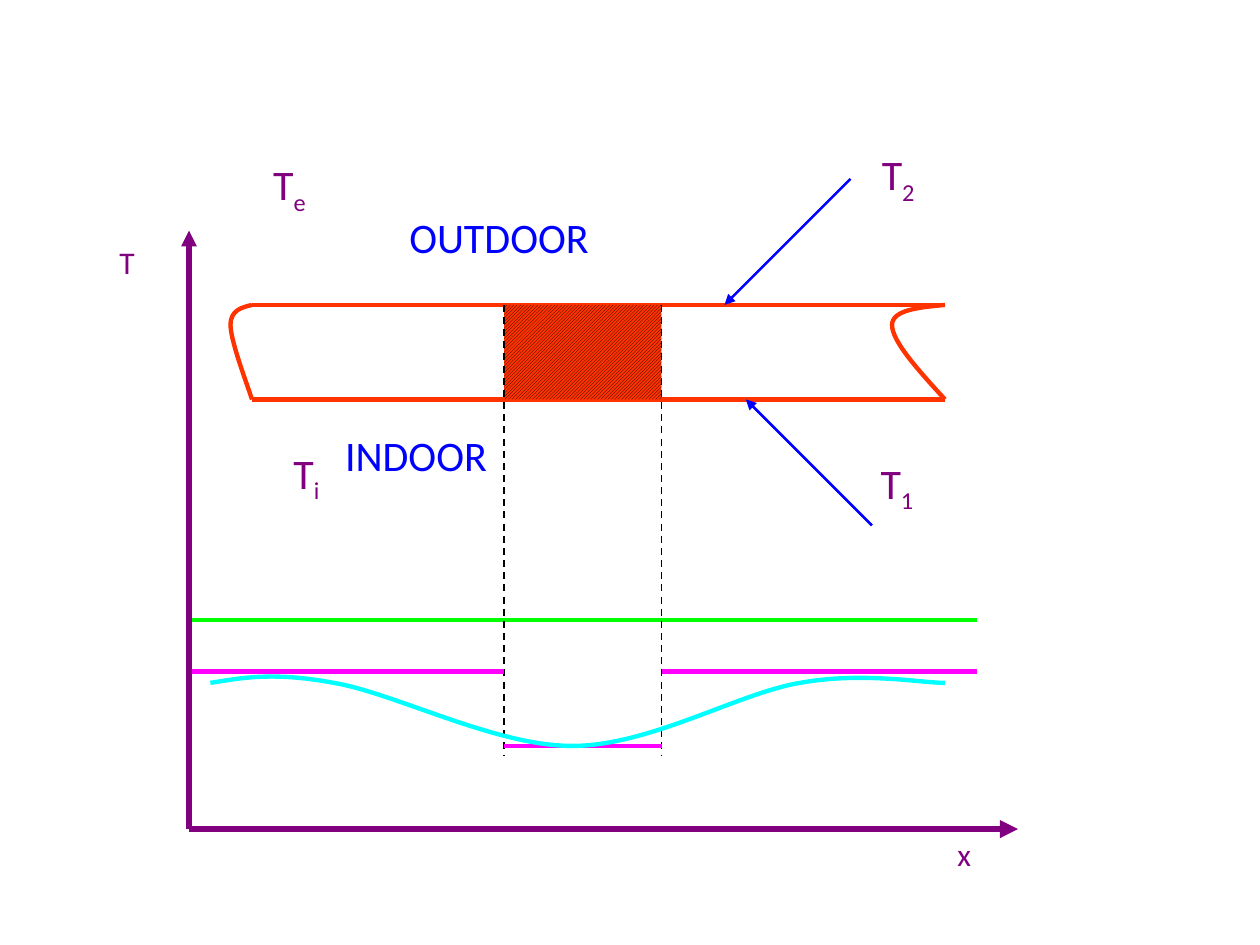
import dataclasses
import typing

import lxml.etree
import pptx
import pptx.dml.color
import pptx.enum.dml
import pptx.enum.shapes
import pptx.enum.text
import pptx.oxml.ns
import pptx.util

Inches = pptx.util.Inches
Point = tuple[float, float]

COLORS = {
    "wall": "FF3300",
    "hatch": "000000",
    "place": "0000FF",
    "symbol": "800080",
    "green": "00FF00",
    "magenta": "FF00FF",
    "cyan": "00FFFF",
}

WALL_LEFT, WALL_RIGHT = 2, 7.5
WALL_TOP, WALL_BOTTOM = 2.42, 3.17
BRIDGE_LEFT, BRIDGE_RIGHT = 4, 5.25
AXIS_X, AXIS_Y = 1.5, 6.58
PLOT_RIGHT = 7.75


@dataclasses.dataclass
class Line:
    start: Point
    end: Point
    color: str
    width: float = 2.5
    dashed: bool = False
    arrow: bool = False


@dataclasses.dataclass
class Curve:
    points: list[Point]
    color: str


@dataclasses.dataclass
class Label:
    text: str
    left: float
    top: float
    width: float
    height: float = 0.5
    size: int = 24
    color: str = "symbol"
    subscript: str = ""
    wrap: bool = False


def rgb(name: str) -> pptx.dml.color.RGBColor:
    return pptx.dml.color.RGBColor.from_string(COLORS[name])


def draw_line(shapes: typing.Any, line: Line) -> None:
    connector = shapes.add_connector(
        pptx.enum.shapes.MSO_CONNECTOR.STRAIGHT,
        *(Inches(value) for value in line.start + line.end),
    )
    connector.line.color.rgb = rgb(line.color)
    connector.line.width = pptx.util.Pt(line.width)
    if line.dashed:
        connector.line.dash_style = pptx.enum.dml.MSO_LINE.DASH
    properties = connector._element.spPr
    if line.arrow:
        outline = properties.find(pptx.oxml.ns.qn("a:ln"))
        lxml.etree.SubElement(outline, pptx.oxml.ns.qn("a:tailEnd"), type="triangle")
    lxml.etree.SubElement(properties, pptx.oxml.ns.qn("a:effectLst"))


def draw_curve(shapes: typing.Any, curve: Curve) -> None:
    points = [(Inches(x), Inches(y)) for x, y in curve.points]
    builder = shapes.build_freeform(*points[0])
    builder.add_line_segments(points[1:], close=False)
    shape = builder.convert_to_shape()
    shape.shadow.inherit = False
    shape.fill.background()
    shape.line.color.rgb = rgb(curve.color)
    shape.line.width = pptx.util.Pt(2.5)
    outline = next(shape._element.iter(pptx.oxml.ns.qn("a:path")))
    segments = outline.findall(pptx.oxml.ns.qn("a:lnTo"))
    for first in range(0, len(segments), 3):
        bezier = lxml.etree.SubElement(outline, pptx.oxml.ns.qn("a:cubicBezTo"))
        for segment in segments[first:first + 3]:
            bezier.append(segment[0])
            outline.remove(segment)


def draw_label(shapes: typing.Any, label: Label) -> None:
    box = shapes.add_textbox(
        Inches(label.left), Inches(label.top), Inches(label.width), Inches(label.height)
    )
    frame = box.text_frame
    frame.word_wrap = label.wrap
    frame.auto_size = pptx.enum.text.MSO_AUTO_SIZE.SHAPE_TO_FIT_TEXT
    para = frame.paragraphs[0]
    font_format = {"name": "Calibri", "size": pptx.util.Pt(label.size)}
    for text in filter(None, (label.text, label.subscript)):
        span = para.add_run()
        span.text = text
        for attribute, value in font_format.items():
            setattr(span.font, attribute, value)
        span.font.color.rgb = rgb(label.color)
    if label.subscript:
        span._r.get_or_add_rPr().set("baseline", "-25000")


def draw_bridge(shapes: typing.Any) -> None:
    bridge = shapes.add_shape(
        pptx.enum.shapes.MSO_SHAPE.RECTANGLE,
        Inches(BRIDGE_LEFT),
        Inches(WALL_TOP),
        Inches(BRIDGE_RIGHT - BRIDGE_LEFT),
        Inches(WALL_BOTTOM - WALL_TOP),
    )
    bridge.shadow.inherit = False
    bridge.line.fill.background()
    bridge.fill.patterned()
    bridge.fill.pattern = pptx.enum.dml.MSO_PATTERN.DARK_UPWARD_DIAGONAL
    bridge.fill.fore_color.rgb = rgb("hatch")
    bridge.fill.back_color.rgb = rgb("wall")


def draw_all(shapes: typing.Any, items: list) -> None:
    painters = {Line: draw_line, Curve: draw_curve, Label: draw_label}
    for item in items:
        painters[type(item)](shapes, item)


def symbol(subscript: str, left: float, top: float) -> Label:
    return Label("T", left, top, 0.53, subscript=subscript, wrap=True)


def main() -> None:
    deck = pptx.Presentation()
    deck.slide_width, deck.slide_height = Inches(10), Inches(7.5)
    page = deck.slides.add_slide(deck.slide_layouts[6])

    wall = page.shapes.add_group_shape().shapes
    draw_all(wall, [
        Line((WALL_LEFT, y), (WALL_RIGHT, y), "wall") for y in (WALL_TOP, WALL_BOTTOM)
    ])
    draw_bridge(wall)
    draw_all(wall, [
        Label("OUTDOOR", 3.15, 1.63, 1.64, 0.51, color="place"),
        Label("INDOOR", 2.64, 3.36, 1.34, 0.51, color="place"),
        symbol("e", 2.07, 1.21),
        symbol("i", 2.23, 3.5),
        Line((6.75, 1.42), (5.75, WALL_TOP), "place", 1.5, arrow=True),
        symbol("2", 6.9, 1.13),
        symbol("1", 6.89, 3.58),
        Line((6.92, 4.17), (5.92, WALL_BOTTOM), "place", 1.5, arrow=True),
        Curve([(WALL_LEFT, WALL_TOP), (1.92, 2.44), (1.83, 2.46), (1.83, 2.58),
               (1.83, 2.71), (1.97, 3.07), (WALL_LEFT, WALL_BOTTOM)], "wall"),
        Curve([(WALL_RIGHT, WALL_TOP), (7.29, 2.44), (7.08, 2.46), (7.08, 2.58),
               (7.08, 2.71), (7.29, 2.94), (WALL_RIGHT, WALL_BOTTOM)], "wall"),
    ])

    draw_all(page.shapes, [Line((AXIS_X, 4.92), (PLOT_RIGHT, 4.92), "green")])
    draw_all(page.shapes, [
        Line((x, WALL_TOP), (x, 6), "hatch", 1, dashed=True)
        for x in (BRIDGE_LEFT, BRIDGE_RIGHT)
    ])

    steps = [(AXIS_X, BRIDGE_LEFT, 5.33), (BRIDGE_RIGHT, PLOT_RIGHT, 5.33),
             (BRIDGE_LEFT, BRIDGE_RIGHT, 5.92)]
    draw_all(page.shapes.add_group_shape().shapes, [
        Line((left, y), (right, y), "magenta") for left, right, y in steps
    ])

    draw_all(page.shapes, [
        Curve([(1.67, 5.42), (1.92, 5.38), (2.17, 5.33), (2.65, 5.42),
               (3.13, 5.5), (3.93, 5.92), (4.54, 5.92),
               (5.16, 5.92), (5.86, 5.5), (6.35, 5.42),
               (6.84, 5.33), (7.31, 5.42), (7.5, 5.42)], "cyan"),
    ])

    draw_all(page.shapes.add_group_shape().shapes, [
        Line((AXIS_X, AXIS_Y), (AXIS_X, 1.83), "symbol", 3, arrow=True),
        Line((AXIS_X, AXIS_Y), (8.08, AXIS_Y), "symbol", 3.5, arrow=True),
        Label("T", 0.85, 1.88, 0.4, size=18),
        Label("x", 7.5, AXIS_Y, 0.39, size=18),
    ])

    deck.save("out.pptx")


if __name__ == "__main__":
    main()
